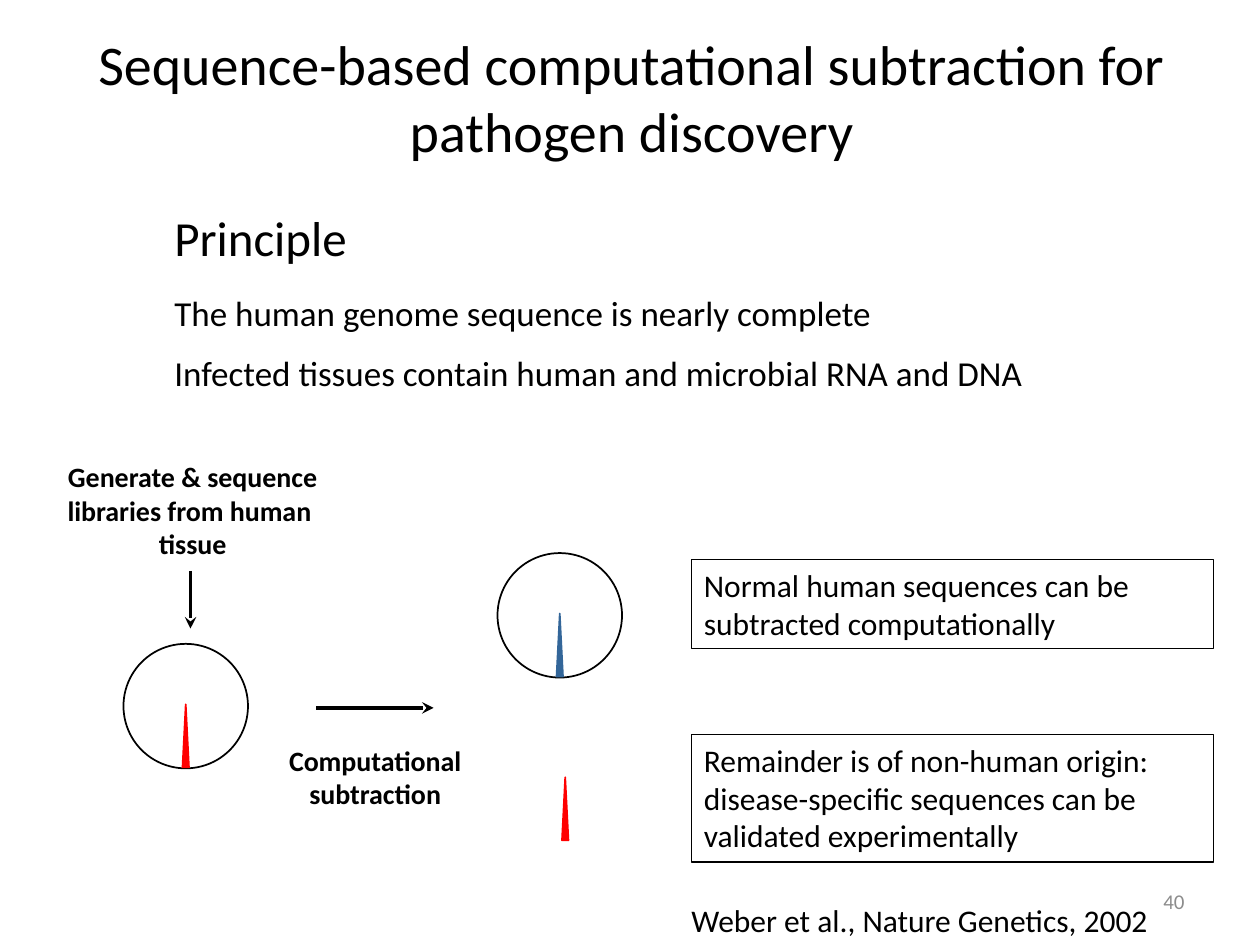
from lxml import etree
from pptx import Presentation
from pptx.dml.color import RGBColor
from pptx.enum import shapes, text
from pptx.oxml.ns import qn
from pptx.util import Cm, Pt

BLACK = RGBColor(0x00, 0x00, 0x00)
WHITE = RGBColor(0xFF, 0xFF, 0xFF)
RED = RGBColor(0xFF, 0x00, 0x00)
BLUE = RGBColor(0x33, 0x66, 0x99)
GREY = RGBColor(0x8C, 0x8C, 0x8C)
FONT = "Calibri"
LEFT, CENTER, RIGHT = text.PP_ALIGN.LEFT, text.PP_ALIGN.CENTER, text.PP_ALIGN.RIGHT

# Places are (left, top, width, height) in centimetres.
TITLE = "Sequence-based computational subtraction for pathogen discovery"
TITLE_PLACE = (0.86, 0.69, 23.75, 2.51)

PRINCIPLE = [  # text, size, space before
    ("Principle", 28, 0),
    ("The human genome sequence is nearly complete", 20, 14),
    ("Infected tissues contain human and microbial RNA and DNA", 20, 10.5),
]
PRINCIPLE_PLACE = (2.31, 4.06, 21.41, 4.34)
PRINCIPLE_INDENT = 0.95

FINDINGS = [
    (["Normal human sequences can be subtracted computationally"],
     (13.94, 11.28, 10.52, 1.8)),
    (["Remainder is of non-human origin:",
      "disease-specific sequences can be validated experimentally"],
     (13.94, 14.81, 10.52, 2.57)),
]
STEPS = [
    (["Generate & sequence libraries from human ", "tissue"], (0.53, 9.14, 6.71, 2.29)),
    (["Computational", "subtraction"], (5.33, 14.86, 4.47, 1.63)),
]
CITATION = ("Weber et al., Nature Genetics, 2002", (13.69, 18.03, 11.2, 1.02))
PAGE = ("40", (18.21, 17.65, 5.92, 1.02))

CIRCLE = 2.51
WEDGE_WIDTH, WEDGE_HEIGHT, WEDGE_DROP = 0.13, 1.27, 1.22
LIBRARIES = [(2.49, 12.98, RED), (10.03, 11.15, BLUE)]  # left, top, wedge colour
REMAINDER = (11.33, 15.67)
ARROWS = [(3.84, 11.51, 3.84, 12.67), (6.38, 14.27, 8.74, 14.27)]


def cm(values):
    return [Cm(value) for value in values]


def add_text(paragraph, words, size, color=BLACK, bold=False, align=LEFT):
    paragraph.alignment = align
    run = paragraph.add_run()
    run.text = words
    run.font.name, run.font.size = FONT, Pt(size)
    run.font.bold, run.font.color.rgb = bold, color


def fill_frame(frame, lines, size, anchor=text.MSO_ANCHOR.TOP, **style):
    frame.word_wrap = True
    frame.auto_size = text.MSO_AUTO_SIZE.NONE
    frame.vertical_anchor = anchor
    for number, line in enumerate(lines):
        paragraph = frame.add_paragraph() if number else frame.paragraphs[0]
        add_text(paragraph, line, size, **style)


def place(placeholder, position):
    (placeholder.left, placeholder.top,
     placeholder.width, placeholder.height) = cm(position)


def add_outlined(slide, kind, position, fill, line, width=1):
    shape = slide.shapes.add_shape(kind, *cm(position))
    shape.shadow.inherit = False
    if fill is None:
        shape.fill.background()
    else:
        shape.fill.solid()
        shape.fill.fore_color.rgb = fill
    shape.line.color.rgb, shape.line.width = line, Pt(width)
    return shape


def add_wedge(slide, left, top, color):
    add_outlined(slide, shapes.MSO_SHAPE.ISOSCELES_TRIANGLE,
                 (left, top, WEDGE_WIDTH, WEDGE_HEIGHT), color, color)


def add_arrow(slide, ends):
    arrow = slide.shapes.add_connector(shapes.MSO_CONNECTOR.STRAIGHT, *cm(ends))
    arrow.line.color.rgb, arrow.line.width = BLACK, Pt(2.25)
    etree.SubElement(arrow.line._get_or_add_ln(), qn("a:tailEnd"), type="stealth")
    etree.SubElement(arrow._element.spPr, qn("a:effectLst"))


def add_principle(body):
    place(body, PRINCIPLE_PLACE)
    frame = body.text_frame
    frame.auto_size = text.MSO_AUTO_SIZE.NONE
    for number, (words, size, space) in enumerate(PRINCIPLE):
        paragraph = frame.add_paragraph() if number else frame.paragraphs[0]
        properties = paragraph._p.get_or_add_pPr()
        properties.set("marL", str(Cm(PRINCIPLE_INDENT)))
        properties.set("indent", "0")
        etree.SubElement(properties, qn("a:buNone"))
        paragraph.space_before = Pt(space)
        add_text(paragraph, words, size)


def main():
    deck = Presentation()
    deck.slide_width, deck.slide_height = Cm(25.4), Cm(19.05)
    slide = deck.slides.add_slide(deck.slide_layouts[1])

    title = slide.shapes.title
    place(title, TITLE_PLACE)
    fill_frame(title.text_frame, [TITLE], 32, text.MSO_ANCHOR.MIDDLE, align=CENTER)
    add_principle(slide.placeholders[1])

    for left, top, color in LIBRARIES:
        add_outlined(slide, shapes.MSO_SHAPE.OVAL, (left, top, CIRCLE, CIRCLE), WHITE, BLACK)
        add_wedge(slide, left + (CIRCLE - WEDGE_WIDTH) / 2, top + WEDGE_DROP, color)
    add_wedge(slide, *REMAINDER, RED)

    for lines, position in FINDINGS:
        box = add_outlined(slide, shapes.MSO_SHAPE.RECTANGLE, position, None, BLACK, 0.75)
        fill_frame(box.text_frame, lines, 18)
    for lines, position in STEPS:
        label = slide.shapes.add_textbox(*cm(position))
        fill_frame(label.text_frame, lines, 16, bold=True, align=CENTER)
    for ends in ARROWS:
        add_arrow(slide, ends)

    number, position = PAGE
    page = slide.shapes.add_textbox(*cm(position))
    fill_frame(page.text_frame, [number], 12, text.MSO_ANCHOR.MIDDLE,
               color=GREY, align=RIGHT)
    source, position = CITATION
    citation = slide.shapes.add_textbox(*cm(position))
    fill_frame(citation.text_frame, [source], 18)

    deck.save("out.pptx")


if __name__ == "__main__":
    main()
